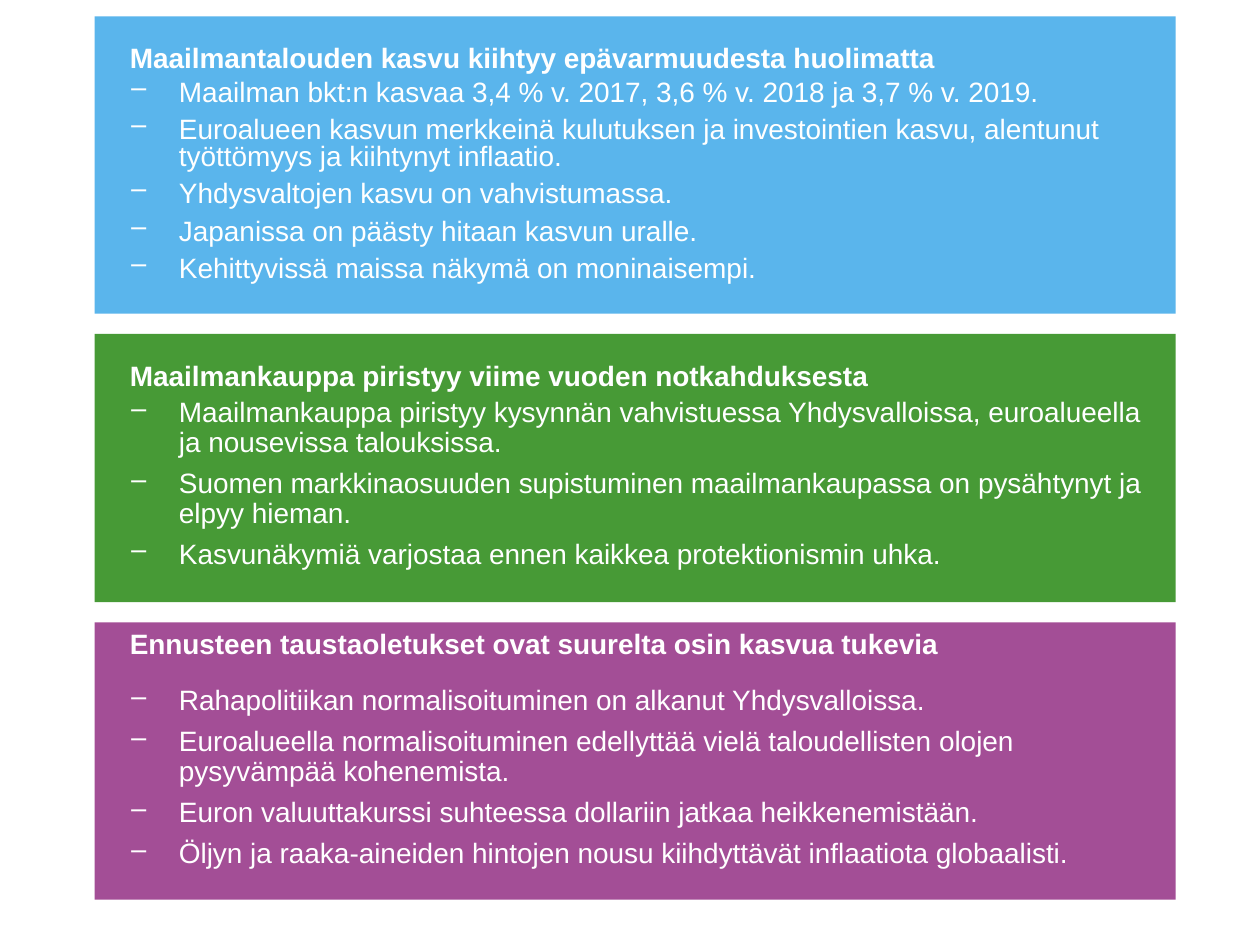
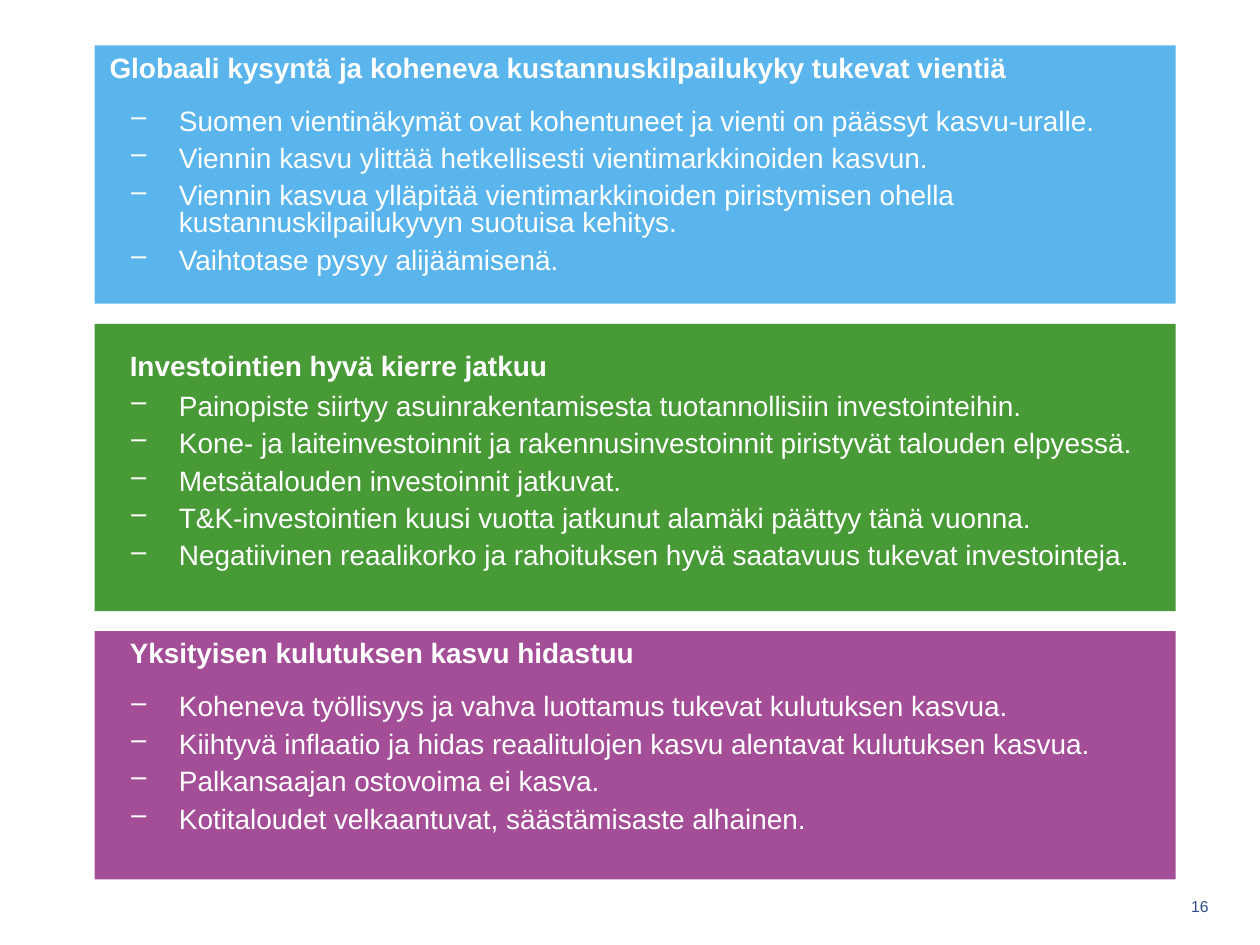
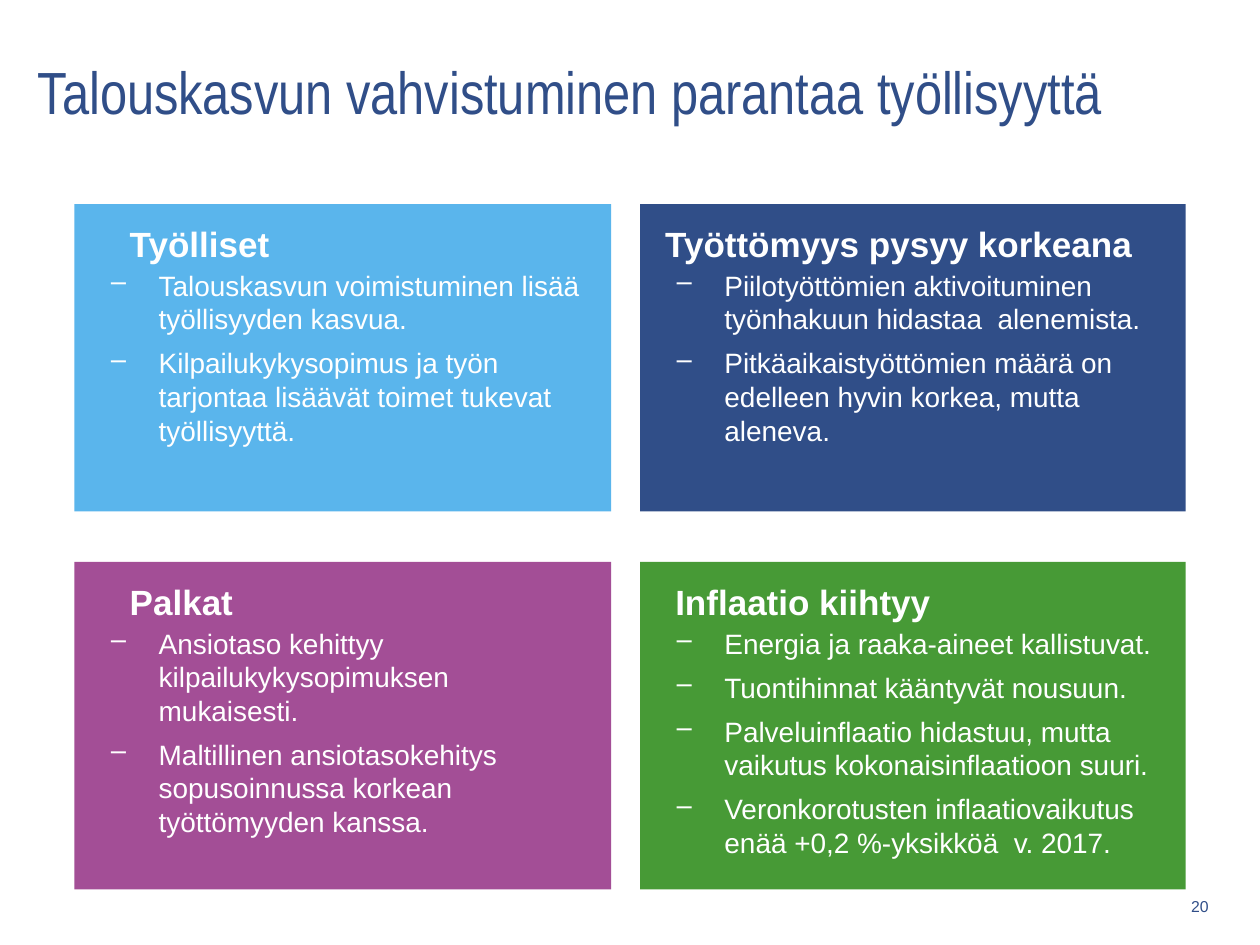
from lxml import etree
from pptx import Presentation
from pptx.dml.color import RGBColor
from pptx.enum.shapes import MSO_SHAPE
from pptx.enum.text import MSO_ANCHOR, PP_ALIGN
from pptx.oxml.ns import qn
from pptx.util import Inches, Pt

RECT = MSO_SHAPE.RECTANGLE
TOP, MIDDLE = MSO_ANCHOR.TOP, MSO_ANCHOR.MIDDLE
LEFT, RIGHT = PP_ALIGN.LEFT, PP_ALIGN.RIGHT

SKY, GREEN, PURPLE, NAVY, WHITE = "5AB5EC", "479A36", "A34E96", "304E88", "FFFFFF"
BODY_INSETS = (0.28, 0.51, 0.2, 0.2)
HEADING_INSETS = (0.28, 0.16, 0.2, 0.2)
INDENT = 0.39
PANEL_LEFT, PANEL_WIDTH, PANEL_GAP = 0.75, 8.58, 0.16


def rgb(colour):
    return RGBColor.from_string(colour)


def write(sp, lines, size=16, font="Arial", colour=WHITE, bold=False, align=LEFT,
          anchor=TOP, insets=(0.1, 0.05, 0.1, 0.05), after=0, spacing=(1, 1), bullet=None):
    """Fill a shape with paragraphs; spacing is for the first line and for the rest."""
    tf = sp.text_frame
    tf.word_wrap = True
    tf.vertical_anchor = anchor
    tf.margin_left, tf.margin_top, tf.margin_right, tf.margin_bottom = map(Inches, insets)
    for i, line in enumerate(lines):
        p = tf.add_paragraph() if i else tf.paragraphs[0]
        p.alignment = align
        p.line_spacing = spacing[min(i, 1)]
        p.space_before, p.space_after = Pt(0), Pt(after)
        if bullet:
            pPr = p._p.get_or_add_pPr()
            pPr.set("marL", str(Inches(INDENT)))
            pPr.set("indent", str(-Inches(INDENT)))
            etree.SubElement(pPr, qn("a:buChar")).set("char", bullet)
        r = p.add_run()
        r.text = line
        r.font.size, r.font.name, r.font.bold = Pt(size), font, bold
        r.font.color.rgb = rgb(colour)


# Stacked panels: fill, height, spacing, heading (dx, dy, width, height), heading, bullets
world = [
    (SKY, 2.36, (0.8, 0.8), (0, 0.08, 8.58, 0.47),
     "Maailmantalouden kasvu kiihtyy epävarmuudesta huolimatta",
     ["Maailman bkt:n kasvaa 3,4 % v. 2017, 3,6 % v. 2018 ja 3,7 % v. 2019.",
      "Euroalueen kasvun merkkeinä kulutuksen ja investointien kasvu, alentunut "
      "työttömyys ja kiihtynyt inflaatio.",
      "Yhdysvaltojen kasvu on vahvistumassa.",
      "Japanissa on päästy hitaan kasvun uralle.",
      "Kehittyvissä maissa näkymä on moninaisempi."]),
    (GREEN, 2.13, (0.9, 0.9), (0, 0.08, 8.58, 0.31),
     "Maailmankauppa piristyy viime vuoden notkahduksesta",
     ["Maailmankauppa piristyy kysynnän vahvistuessa Yhdysvalloissa, euroalueella "
      "ja nousevissa talouksissa.",
      "Suomen markkinaosuuden supistuminen maailmankaupassa on pysähtynyt ja "
      "elpyy hieman.",
      "Kasvunäkymiä varjostaa ennen kaikkea protektionismin uhka."]),
    (PURPLE, 2.2, (0.9, 0.9), (0, -0.08, 8.58, 0.55),
     "Ennusteen taustaoletukset ovat suurelta osin kasvua tukevia",
     ["Rahapolitiikan normalisoituminen on alkanut Yhdysvalloissa.",
      "Euroalueella normalisoituminen edellyttää vielä taloudellisten olojen "
      "pysyvämpää kohenemista.",
      "Euron valuuttakurssi suhteessa dollariin jatkaa heikkenemistään.",
      "Öljyn ja raaka-aineiden hintojen nousu kiihdyttävät inflaatiota globaalisti."]),
]
demand = [
    (SKY, 2.05, (0.8, 0.8), (-0.16, -0.07, 8.9, 0.63),
     "Globaali kysyntä ja koheneva kustannuskilpailukyky tukevat vientiä",
     ["Suomen vientinäkymät ovat kohentuneet ja vienti on päässyt kasvu-uralle.",
      "Viennin kasvu ylittää hetkellisesti vientimarkkinoiden kasvun.",
      "Viennin kasvua ylläpitää vientimarkkinoiden piristymisen ohella "
      "kustannuskilpailukyvyn suotuisa kehitys.",
      "Vaihtotase pysyy alijäämisenä."]),
    (GREEN, 2.28, (1, 0.8), (0, 0.08, 8.35, 0.39),
     "Investointien hyvä kierre jatkuu",
     ["Painopiste siirtyy asuinrakentamisesta tuotannollisiin investointeihin.",
      "Kone- ja laiteinvestoinnit ja rakennusinvestoinnit piristyvät talouden elpyessä.",
      "Metsätalouden investoinnit jatkuvat.",
      "T&K-investointien kuusi vuotta jatkunut alamäki päättyy tänä vuonna.",
      "Negatiivinen reaalikorko ja rahoituksen hyvä saatavuus tukevat investointeja."]),
    (PURPLE, 1.97, (0.8, 0.8), (0, -0.08, 8.58, 0.55),
     "Yksityisen kulutuksen kasvu hidastuu",
     ["Koheneva työllisyys ja vahva luottamus tukevat kulutuksen kasvua.",
      "Kiihtyvä inflaatio ja hidas reaalitulojen kasvu alentavat kulutuksen kasvua.",
      "Palkansaajan ostovoima ei kasva.",
      "Kotitaloudet velkaantuvat, säästämisaste alhainen."]),
]

# Two by two panels: fill, heading dx, heading width, heading, bullets
labour = [
    (SKY, 0.16, 4.1, "Työlliset",
     ["Talouskasvun voimistuminen lisää työllisyyden kasvua.",
      "Kilpailukykysopimus ja työn tarjontaa lisäävät toimet tukevat työllisyyttä."]),
    (NAVY, -0.08, 4.33, "Työttömyys pysyy korkeana",
     ["Piilotyöttömien aktivoituminen työnhakuun hidastaa  alenemista.",
      "Pitkäaikaistyöttömien määrä on edelleen hyvin korkea, mutta aleneva."]),
    (PURPLE, 0.16, 4.1, "Palkat",
     ["Ansiotaso kehittyy kilpailukykysopimuksen mukaisesti.",
      "Maltillinen ansiotasokehitys sopusoinnussa korkean työttömyyden kanssa."]),
    (GREEN, 0, 4.1, "Inflaatio kiihtyy",
     ["Energia ja raaka-aineet kallistuvat.",
      "Tuontihinnat kääntyvät nousuun.",
      "Palveluinflaatio hidastuu, mutta vaikutus kokonaisinflaatioon suuri.",
      "Veronkorotusten inflaatiovaikutus enää +0,2 %-yksikköä  v. 2017."]),
]
columns = [(0.59, 4.26), (5.08, 4.33)]
rows = [(1.62, 2.44), (4.46, 2.6)]

# Every slide as panels: box, fill, spacing, heading box, heading size, heading, bullets
slides = []
for start, stack, number in [(0.13, world, None), (0.36, demand, "16")]:
    panels, top = [], start
    for fill, height, spacing, (dx, dy, w, h), heading, bullets in stack:
        panels.append(((PANEL_LEFT, top, PANEL_WIDTH, height), fill, spacing,
                       (PANEL_LEFT + dx, top + dy, w, h), 16, heading, bullets))
        top += height + PANEL_GAP
    slides.append((None, number, panels))

panels = []
for i, (fill, dx, w, heading, bullets) in enumerate(labour):
    (left, width), (top, height) = columns[i % 2], rows[i // 2]
    panels.append(((left, top, width, height), fill, (1, 1),
                   (left + dx, top, w, 0.55), 20, heading, bullets))
slides.append(("Talouskasvun vahvistuminen parantaa työllisyyttä", "20", panels))

prs = Presentation()
prs.slide_width, prs.slide_height = Inches(10), Inches(7.5)
title_only, blank = prs.slide_layouts[5], prs.slide_layouts[6]

for title, number, panels in slides:
    s = prs.slides.add_slide(title_only if title else blank)
    if title:
        sp = s.shapes.title
        sp.left, sp.top, sp.width, sp.height = map(Inches, (0.2, 0.21, 9.69, 1.02))
        write(sp, [title], size=34, font="Arial Narrow", colour=NAVY, anchor=MIDDLE)
    for box, fill, spacing, heading_box, size, heading, bullets in panels:
        sp = s.shapes.add_shape(RECT, *map(Inches, box))
        sp.shadow.inherit = False
        sp.fill.solid()
        sp.fill.fore_color.rgb = rgb(fill)
        sp.line.fill.background()
        write(sp, bullets, insets=BODY_INSETS, after=6, spacing=spacing, bullet="‒")
        sp = s.shapes.add_textbox(*map(Inches, heading_box))
        write(sp, [heading], size=size, bold=True, insets=HEADING_INSETS, after=8)
    if number:
        sp = s.shapes.add_textbox(*map(Inches, (9.17, 7.03, 0.52, 0.32)))
        write(sp, [number], size=9, colour=NAVY, align=RIGHT, anchor=MIDDLE)

prs.save("out.pptx")
